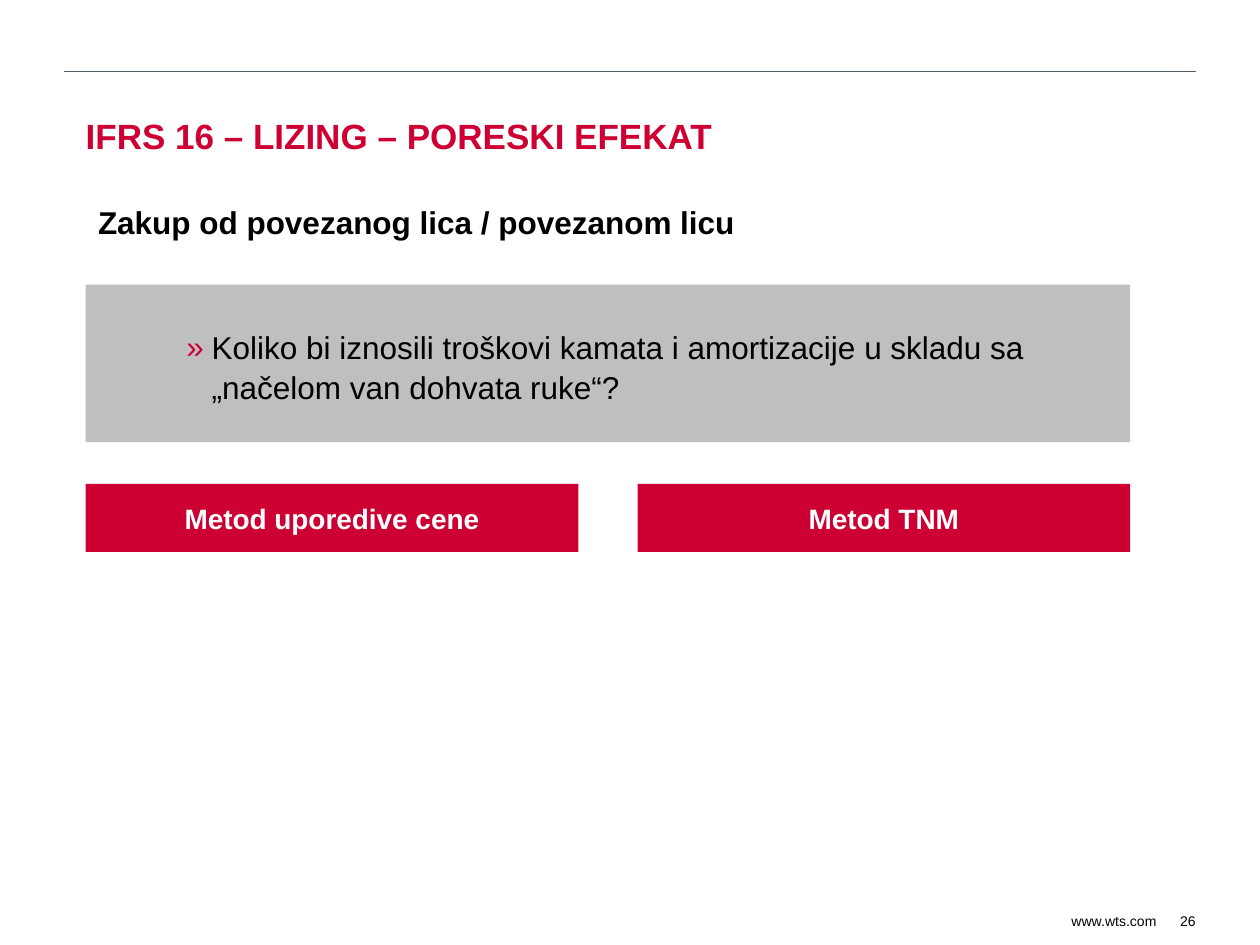
from dataclasses import dataclass

from lxml.etree import SubElement
from pptx import Presentation
from pptx.dml.color import RGBColor
from pptx.enum.shapes import MSO_CONNECTOR as Connector, MSO_SHAPE as Shape
from pptx.enum.text import MSO_ANCHOR as Anchor, PP_ALIGN as Align
from pptx.oxml.ns import qn
from pptx.util import Inches, Pt


@dataclass(frozen=True)
class Theme:
    font: str = "Arial"
    heading: str = "CE0033"
    accent: str = "CC0033"
    panel: str = "BFBFBF"
    rule: str = "515D69"
    ink: str = "000000"
    paper: str = "FFFFFF"
    title_size: int = 20
    body_size: int = 18
    label_size: int = 16
    footer_size: int = 8


theme = Theme()


def write(box, text, *, size, color=theme.ink, bold=False, align=Align.LEFT,
          anchor=Anchor.TOP, margins=(0, 0, 0, 0), wrap=True, bullet=None):
    frame = box.text_frame
    frame.word_wrap = wrap
    frame.vertical_anchor = anchor
    (frame.margin_left, frame.margin_top,
     frame.margin_right, frame.margin_bottom) = [Inches(margin) for margin in margins]
    para = frame.paragraphs[0]
    para.alignment = align
    if bullet:
        para.line_spacing = 1.05
        properties = para._p.get_or_add_pPr()
        properties.set("marL", str(Inches(1)))
        properties.set("indent", str(Inches(-0.2)))
        bullet_color = SubElement(properties, qn("a:buClr"))
        SubElement(bullet_color, qn("a:srgbClr"), val=theme.accent)
        SubElement(properties, qn("a:buFont"), typeface=theme.font)
        SubElement(properties, qn("a:buChar"), char=bullet)
    span = para.add_run()
    span.text = text
    span.font.name = theme.font
    span.font.size = Pt(size)
    span.font.bold = bold
    span.font.color.rgb = RGBColor.from_string(color)


def add_block(left, top, width, height, fill):
    block = page.shapes.add_shape(
        Shape.RECTANGLE, Inches(left), Inches(top), Inches(width), Inches(height))
    block.shadow.inherit = False
    block.fill.solid()
    block.fill.fore_color.rgb = RGBColor.from_string(fill)
    block.line.fill.background()
    return block


deck = Presentation()
deck.slide_width, deck.slide_height = Inches(10), Inches(7.5)
page = deck.slides.add_slide(deck.slide_layouts[5])
left_edge = 0.68

rule = page.shapes.add_connector(
    Connector.STRAIGHT, Inches(0.51), Inches(0.57), Inches(9.49), Inches(0.57))
rule.line.color.rgb = RGBColor.from_string(theme.rule)
rule.line.width = Pt(0.75)
SubElement(rule._element.spPr, qn("a:effectLst"))

title = page.shapes.title
title.left, title.top = Inches(left_edge), Inches(0.89)
title.width, title.height = Inches(8.98), Inches(0.67)
write(title, "IFRS 16 – LIZING – PORESKI EFEKAT", size=theme.title_size,
      color=theme.heading, bold=True, margins=(0, 0.02, 0, 0))

subtitle = page.shapes.add_textbox(
    Inches(left_edge), Inches(1.56), Inches(6.46), Inches(0.4))
write(subtitle, "Zakup od povezanog lica / povezanom licu",
      size=theme.body_size, bold=True, margins=(0.1, 0.05, 0.1, 0.05))

question = add_block(left_edge, 2.26, 8.29, 1.25, theme.panel)
write(question,
      "Koliko bi iznosili troškovi kamata i amortizacije u skladu sa „načelom van dohvata ruke“?",
      size=theme.body_size, anchor=Anchor.MIDDLE, margins=(0, 0.04, 0, 0), bullet="»")

for column, method in enumerate(("Metod uporedive cene", "Metod TNM")):
    block = add_block(left_edge + column * 4.38, 3.84, 3.91, 0.54, theme.accent)
    write(block, method, size=theme.label_size, color=theme.paper, bold=True,
          align=Align.CENTER, anchor=Anchor.MIDDLE, margins=(0.1, 0.05, 0.1, 0.05))

for text, left, width in (("www.wts.com", 8.49, 0.69), ("26", 9.27, 0.22)):
    footer = page.shapes.add_textbox(
        Inches(left), Inches(7.24), Inches(width), Inches(0.14))
    write(footer, text, size=theme.footer_size, align=Align.RIGHT,
          anchor=Anchor.MIDDLE, wrap=False)

deck.save("out.pptx")
